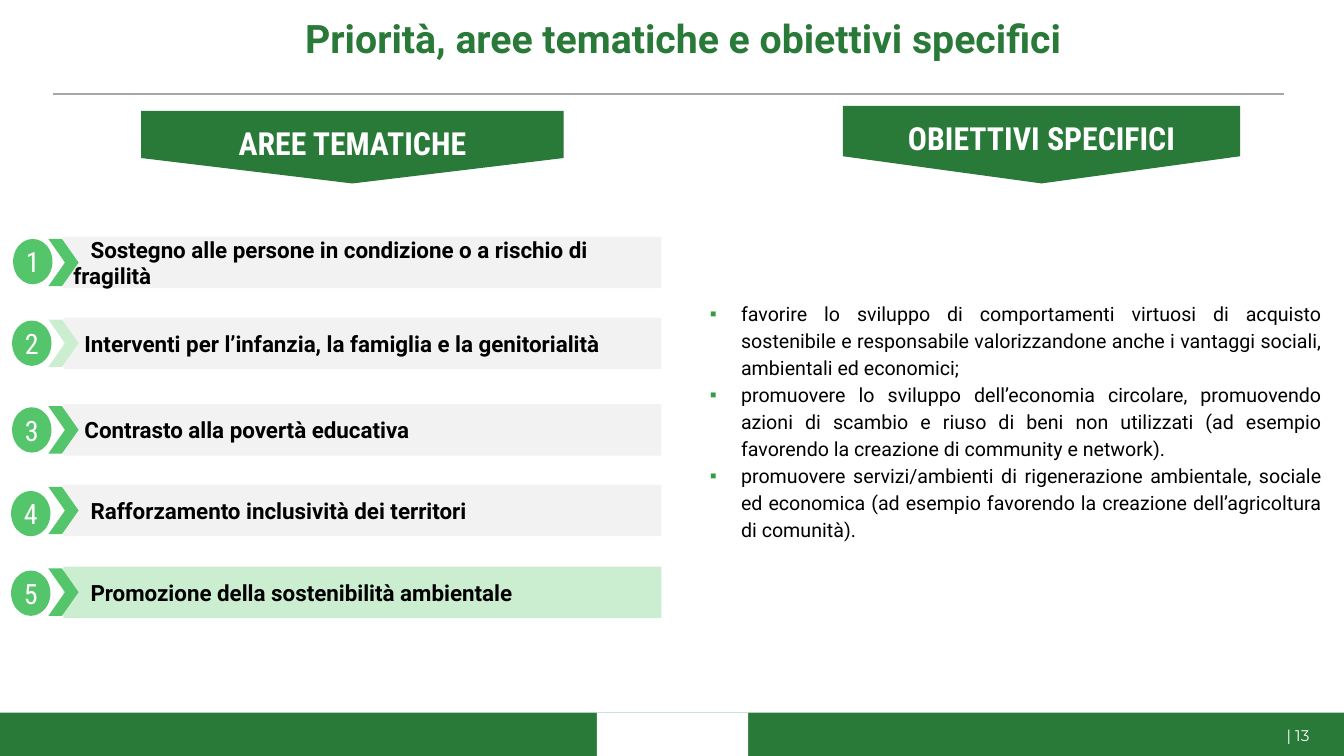
from lxml import etree
from pptx import Presentation
from pptx import util as u
from pptx.dml.color import RGBColor
from pptx.enum import shapes, text
from pptx.oxml import ns

WIDTH, HEIGHT = 13.33, 7.5
GREEN, BRIGHT, PALE = "297A38", "55C56B", "CBEED1"
GREY, WHITE, BLACK = "F2F2F2", "FFFFFF", "000000"
ALIGN, ANCHOR = text.PP_ALIGN, text.MSO_ANCHOR

# label, row top, first-line indent, chevron colour, row colour, badge left and drop
AREAS = [
    ("Sostegno alle persone in condizione o a rischio di fragilità", 2.35, 0.17, BRIGHT, GREY, 0.13, 0.02),
    ("Interventi per l’infanzia, la famiglia e la genitorialità", 3.15, 0.11, PALE, GREY, 0.12, 0.03),
    ("Contrasto alla povertà educativa", 4.01, 0.11, BRIGHT, GREY, 0.12, 0.03),
    ("Rafforzamento inclusività dei territori", 4.81, 0.17, BRIGHT, GREY, 0.11, 0.06),
    ("Promozione della sostenibilità ambientale", 5.62, 0.17, BRIGHT, PALE, 0.11, 0.04),
]
GOALS = [
    "favorire lo sviluppo di comportamenti virtuosi di acquisto sostenibile e "
    "responsabile valorizzandone anche i vantaggi sociali, ambientali ed economici;",
    "promuovere lo sviluppo dell’economia circolare, promuovendo azioni di scambio e "
    "riuso di beni non utilizzati (ad esempio favorendo la creazione di community e network).",
    "promuovere servizi/ambienti di rigenerazione ambientale, sociale ed economica "
    "(ad esempio favorendo la creazione dell’agricoltura di comunità).",
]


def color(value):
    return RGBColor.from_string(value)


def inches(*lengths):
    return [u.Inches(length) for length in lengths]


def set_bullet(paragraph, indent, bullet_color):
    properties = paragraph._p.get_or_add_pPr()
    properties.set("marL", str(u.Inches(indent)))
    properties.set("indent", str(-u.Inches(indent)))
    holder = etree.SubElement(properties, ns.qn("a:buClr"))
    etree.SubElement(holder, ns.qn("a:srgbClr"), val=bullet_color)
    etree.SubElement(properties, ns.qn("a:buFont"), typeface="Arial")
    etree.SubElement(properties, ns.qn("a:buChar"), char="▪")


def write(shape, *lines, size=16, font="Roboto", ink=BLACK, bold=False, align=ALIGN.LEFT,
          anchor=ANCHOR.TOP, insets=(0.1, 0.1), spacing=1.0, first_indent=0,
          bullet=None, wrap=True):
    frame = shape.text_frame
    frame.word_wrap = wrap
    frame.auto_size = text.MSO_AUTO_SIZE.NONE
    frame.vertical_anchor = anchor
    frame.margin_left = frame.margin_right = u.Inches(insets[0])
    frame.margin_top = frame.margin_bottom = u.Inches(insets[1])
    for index, line in enumerate(lines):
        paragraph = frame.add_paragraph() if index else frame.paragraphs[0]
        if bullet:
            set_bullet(paragraph, 0.31, bullet)
        elif first_indent:
            paragraph._p.get_or_add_pPr().set("indent", str(u.Inches(first_indent)))
        paragraph.alignment = align
        paragraph.line_spacing = spacing
        paragraph.space_before = u.Pt(0)
        run = paragraph.add_run()
        run.text = line
        run.font.size, run.font.name, run.font.bold = u.Pt(size), font, bold
        run.font.color.rgb = color(ink)


def paint(shape, fill):
    shape.shadow.inherit = False
    shape.fill.solid()
    shape.fill.fore_color.rgb = color(fill)
    shape.line.fill.background()
    return shape


def add_block(slide, kind, box, fill):
    return paint(slide.shapes.add_shape(kind, *inches(*box)), fill)


def place(shape, box):
    shape.left, shape.top, shape.width, shape.height = inches(*box)


def add_footer(slide, box):
    left, top, width, height = box
    add_block(slide, shapes.MSO_SHAPE.RECTANGLE, box, GREEN)
    add_block(slide, shapes.MSO_SHAPE.RECTANGLE, (left + 5.92, top, 1.5, height), WHITE)
    number = slide.shapes.add_textbox(*inches(left + width - 0.77, top + 0.13, 0.63, 0.19))
    write(number, "| 13", size=11, font="Montserrat", ink=WHITE,
          align=ALIGN.CENTER, insets=(0.1, 0))


def add_header(slide, box):
    left, top, width, height = box
    place(slide.shapes.title, box)
    write(slide.shapes.title, "Priorità, aree tematiche e obiettivi specifici", size=28,
          ink=GREEN, bold=True, align=ALIGN.CENTER, spacing=0.9)
    rule_top = top + height + 0.02
    rule = slide.shapes.add_connector(shapes.MSO_CONNECTOR.STRAIGHT,
                                      *inches(0.53, rule_top, 12.74, rule_top))
    rule.line.color.rgb = color("A6A6A6")
    rule.line.width = u.Pt(1.5)
    etree.SubElement(rule._element.spPr, ns.qn("a:effectLst"))


def add_banner(slide, box, label):
    left, top, width, height = box
    shoulder = top + height * 0.65
    points = [(left, shoulder), (left + width / 2, top + height),
              (left + width, shoulder), (left + width, top)]
    builder = slide.shapes.build_freeform(*inches(left, top))
    builder.add_line_segments([inches(*point) for point in points], close=True)
    banner = paint(builder.convert_to_shape(), GREEN)
    write(banner, label, size=22.7, font="Roboto Condensed", ink=WHITE, bold=True,
          align=ALIGN.CENTER, insets=(0.13, 0.13))


def add_area(slide, box, number, label, indent, arrow, fill, badge_left, badge_drop):
    left, top, width, height = box
    bar = add_block(slide, shapes.MSO_SHAPE.RECTANGLE, box, fill)
    write(bar, label, bold=True, anchor=ANCHOR.MIDDLE, first_indent=indent)
    chevron = add_block(slide, shapes.MSO_SHAPE.CHEVRON,
                        (left - 0.15, top + 0.02, 0.3, 0.47), arrow)
    chevron.adjustments[0] = 0.55
    badge = add_block(slide, shapes.MSO_SHAPE.OVAL,
                      (badge_left, top + badge_drop, 0.39, 0.45), BRIGHT)
    write(badge, str(number), size=20, font="Roboto Condensed", ink=WHITE,
          align=ALIGN.CENTER, anchor=ANCHOR.MIDDLE, insets=(0, 0), wrap=False)


def add_goals(slide, box):
    body = slide.placeholders[1]
    place(body, box)
    write(body, *GOALS, size=14, align=ALIGN.JUSTIFY, insets=(0.1, 0.05),
          spacing=1.15, bullet="349C48")


def main():
    presentation = Presentation()
    presentation.slide_width, presentation.slide_height = inches(WIDTH, HEIGHT)
    slide = presentation.slides.add_slide(presentation.slide_layouts[1])
    add_footer(slide, (0, 7.07, WIDTH, HEIGHT - 7.07))
    add_header(slide, (0.22, 0.09, WIDTH - 0.22, 0.82))
    add_banner(slide, (1.4, 1.1, 4.19, 0.72), "AREE TEMATICHE")
    add_banner(slide, (8.36, 1.05, 3.94, 0.77), "OBIETTIVI SPECIFICI")
    for number, (label, top, *style) in enumerate(AREAS, start=1):
        add_area(slide, (0.63, top, 5.93, 0.51), number, label, *style)
    add_goals(slide, (6.94, 2.91, 6.27, 2.53))
    presentation.save("out.pptx")


if __name__ == "__main__":
    main()
